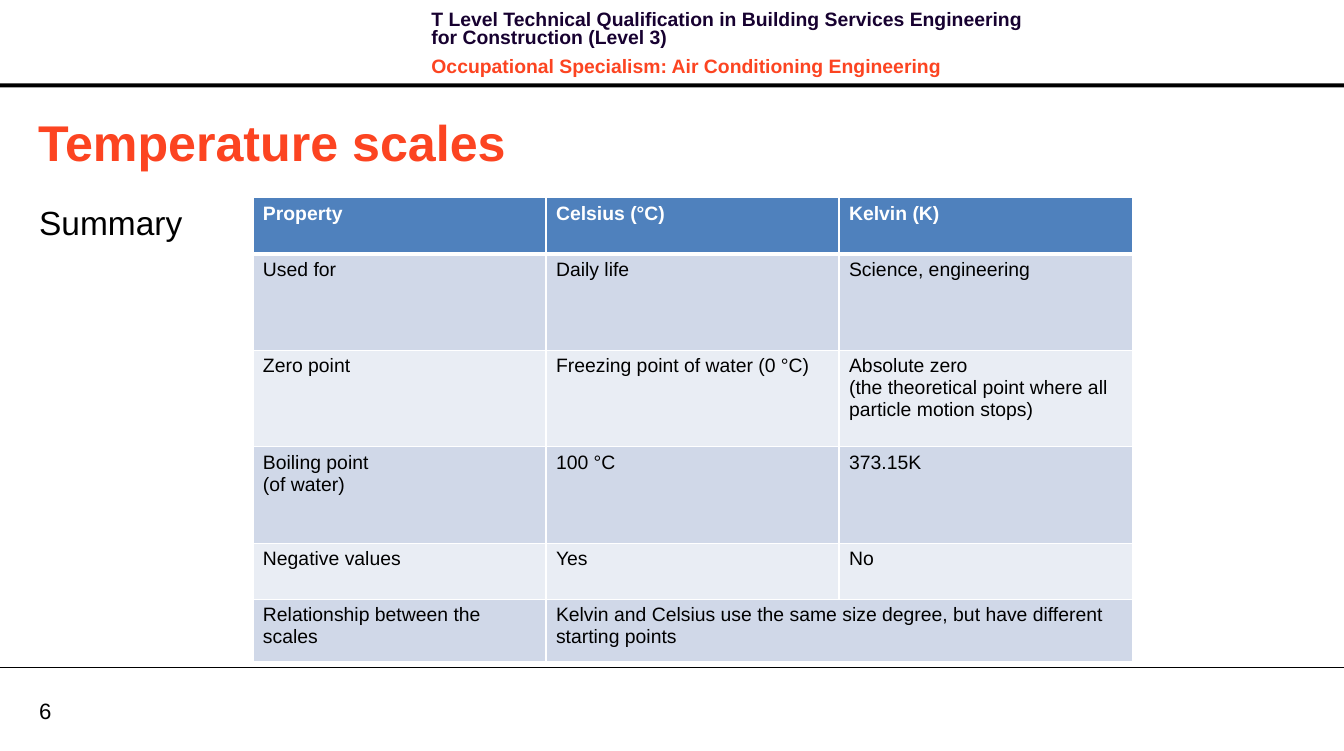
"""Build the temperature scales summary slide."""
from lxml import etree
from pptx import Presentation
from pptx.dml.color import RGBColor
from pptx.enum.shapes import MSO_CONNECTOR, MSO_SHAPE
from pptx.enum.text import MSO_ANCHOR, MSO_AUTO_SIZE, PP_ALIGN
from pptx.oxml.ns import qn
from pptx.util import Pt

EMU_PER_PX = 9144
PAGE_WIDTH, PAGE_HEIGHT = 1339, 748
TITLE_AND_CONTENT = 1

LINE = MSO_CONNECTOR.STRAIGHT
RECTANGLE = MSO_SHAPE.RECTANGLE
TOP, MIDDLE = MSO_ANCHOR.TOP, MSO_ANCHOR.MIDDLE
LEFT = PP_ALIGN.LEFT
NO_AUTOFIT = MSO_AUTO_SIZE.NONE

BLACK = RGBColor(0x00, 0x00, 0x00)
WHITE = RGBColor(0xFF, 0xFF, 0xFF)
NAVY = RGBColor(0x17, 0x01, 0x30)
ORANGE = RGBColor(0xFC, 0x44, 0x21)
BLUE = RGBColor(0x4F, 0x81, 0xBD)
BANDS = (RGBColor(0xE9, 0xED, 0xF4), RGBColor(0xD0, 0xD8, 0xE8))

COLUMN_WIDTH = 292
ROW_HEIGHTS = (56, 96, 96, 96, 56, 62)
ROWS = (
    ("Property", "Celsius (°C)", "Kelvin (K)"),
    ("Used for", "Daily life", "Science, engineering"),
    ("Zero point", "Freezing point of water (0 °C)",
     "Absolute zero\n(the theoretical point where all particle motion stops)"),
    ("Boiling point\n(of water)", "100 °C", "373.15K"),
    ("Negative values", "Yes", "No"),
    ("Relationship between the scales",
     "Kelvin and Celsius use the same size degree, but have different starting points"),
)


def px(length):
    """Turn pixels into EMU."""
    return length * EMU_PER_PX


def set_attributes(target, values):
    """Set each named value on the target."""
    for name, value in values.items():
        setattr(target, name, value)


def write_para(para, text, size, color, bold=False, **layout):
    """Fill and format one paragraph."""
    para.text = text
    set_attributes(para, {"alignment": LEFT, **layout})
    for span in para.runs:
        set_attributes(span.font, {"name": "Arial", "size": Pt(size), "bold": bold})
        span.font.color.rgb = color


def format_box(box, place, margins=(10, 5), anchor=TOP):
    """Place a text shape and set up its frame."""
    set_attributes(box, dict(zip(("left", "top", "width", "height"), map(px, place))))
    across, down = map(px, margins)
    set_attributes(box.text_frame, {
        "margin_left": across, "margin_right": across,
        "margin_top": down, "margin_bottom": down,
        "word_wrap": True, "auto_size": NO_AUTOFIT, "vertical_anchor": anchor,
    })
    return box.text_frame


def add_text_box(page, place, **frame_format):
    """Add a formatted text box and return its frame."""
    return format_box(page.shapes.add_textbox(*map(px, place)), place, **frame_format)


def remove_bullet(para):
    """Drop the bullet and indent of a body paragraph."""
    properties = para._p.get_or_add_pPr()
    properties.set("marL", "0")
    properties.set("indent", "0")
    etree.SubElement(properties, qn("a:buNone"))


def add_bar(page, top, height):
    """Add a solid bar across the page."""
    bar = page.shapes.add_shape(RECTANGLE, 0, px(top), px(PAGE_WIDTH), px(height))
    bar.shadow.inherit = False
    bar.fill.solid()
    bar.fill.fore_color.rgb = BLACK
    bar.line.fill.background()


def add_rule(page, top):
    """Add a thin line across the page."""
    rule = page.shapes.add_connector(LINE, 0, px(top), px(PAGE_WIDTH), px(top))
    rule.line.width = Pt(0.75)
    rule.line.color.rgb = BLACK
    etree.SubElement(rule._element.spPr, qn("a:effectLst"))


def add_borders(cell, top, bottom):
    """Give a cell white borders with the given top and bottom widths."""
    properties = cell._tc.get_or_add_tcPr()
    for side, width in (("L", 1), ("R", 1), ("T", top), ("B", bottom)):
        border = etree.SubElement(properties, qn(f"a:ln{side}"), w=str(Pt(width)))
        fill = etree.SubElement(border, qn("a:solidFill"))
        etree.SubElement(fill, qn("a:srgbClr"), val=str(WHITE))


def add_summary_table(page, left, top):
    """Add the table that compares the two scales."""
    columns = len(ROWS[0])
    table = page.shapes.add_table(
        len(ROWS), columns, px(left), px(top),
        px(columns * COLUMN_WIDTH), px(sum(ROW_HEIGHTS))).table
    table.horz_banding = False
    for column in table.columns:
        column.width = px(COLUMN_WIDTH)
    for index, (row, height) in enumerate(zip(table.rows, ROW_HEIGHTS)):
        row.height = px(height)
        header = index == 0
        for cell in row.cells:
            add_borders(cell, 3 if index == 1 else 1, 3 if header else 1)
            cell.fill.solid()
            cell.fill.fore_color.rgb = BLUE if header else BANDS[index % 2]
        for cell, text in zip(row.cells, ROWS[index]):
            write_para(cell.text_frame.paragraphs[0], text, 13.9,
                       WHITE if header else BLACK, header)
    last = len(ROWS) - 1
    table.cell(last, 1).merge(table.cell(last, columns - 1))


def add_header(page):
    """Add the course name and specialism at the top."""
    frame = add_text_box(page, (420, 7, 633, 64))
    spacing = {"line_spacing": Pt(13), "space_after": Pt(4)}
    write_para(frame.paragraphs[0],
               "T Level Technical Qualification in Building Services Engineering "
               "for Construction (Level 3)", 13.9, NAVY, True, **spacing)
    write_para(frame.add_paragraph(),
               "Occupational Specialism: Air Conditioning Engineering",
               13.9, ORANGE, True, space_before=Pt(4), **spacing)


def main():
    """Build and save the deck."""
    deck = Presentation()
    deck.slide_width, deck.slide_height = px(PAGE_WIDTH), px(PAGE_HEIGHT)
    page = deck.slides.add_slide(deck.slide_layouts[TITLE_AND_CONTENT])

    title = format_box(page.shapes.title, (28, 106, 1147, 71))
    write_para(title.paragraphs[0], "Temperature scales", 36, ORANGE, True)

    body = format_box(page.placeholders[1], (39, 197, 1275, 279), margins=(0, 0))
    remove_bullet(body.paragraphs[0])
    write_para(body.paragraphs[0], "Summary", 24, BLACK,
               line_spacing=1.1, space_before=Pt(0), space_after=Pt(12))

    add_bar(page, 83, 4)
    add_rule(page, 665)
    add_header(page)
    number = add_text_box(page, (39, 694, 64, 27), margins=(0, 0), anchor=MIDDLE)
    write_para(number.paragraphs[0], "6", 15.9, BLACK)
    add_summary_table(page, 252, 197)
    deck.save("out.pptx")


if __name__ == "__main__":
    main()
